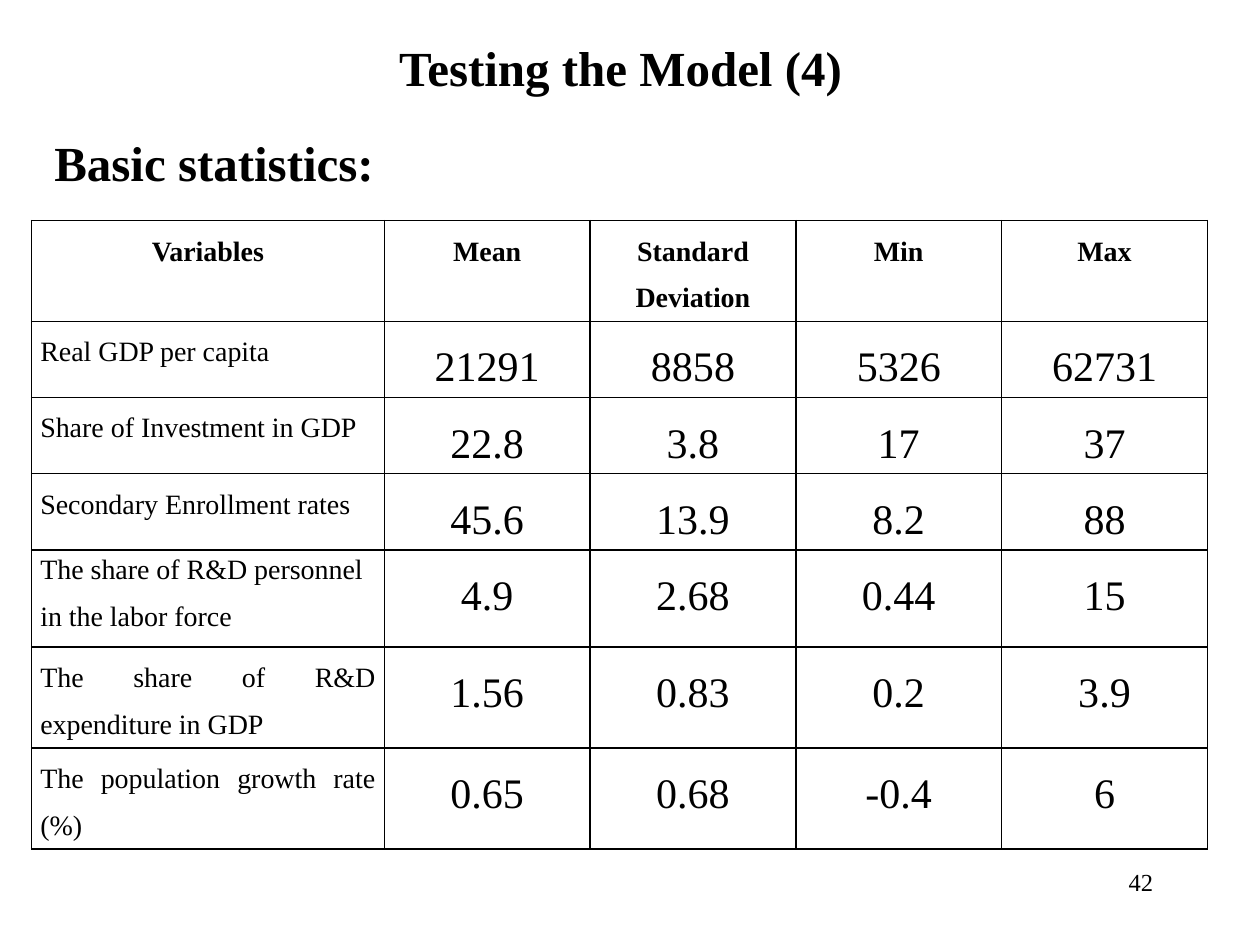
import pptx
import pptx.util
import pptx.dml.color
import pptx.enum.text
import pptx.oxml.ns
import lxml.etree

ALIGN = pptx.enum.text.PP_ALIGN
BLACK = pptx.dml.color.RGBColor(0, 0, 0)
FONT = "Times New Roman"
COLS, ROWS = 120, 90  # slide grid

HEAD = ["Variables", "Mean", "Standard Deviation", "Min", "Max"]
STATS = [
    (["Real GDP per capita"], "21291", "8858", "5326", "62731"),
    (["Share of Investment in GDP"], "22.8", "3.8", "17", "37"),
    (["Secondary Enrollment rates"], "45.6", "13.9", "8.2", "88"),
    (["The share of R&D personnel ", "in the labor force"],
     "4.9", "2.68", "0.44", "15"),
    (["The share of R&D expenditure in GDP"], "1.56", "0.83", "0.2", "3.9"),
    (["The population growth rate (%)"], "0.65", "0.68", "-0.4", "6"),
]
WIDTHS = [33.6] + [19.6] * 4
HEIGHTS = [9.6, 7.25, 7.25, 7.3, 9.25, 9.6, 9.6]

deck = pptx.Presentation()
deck.slide_width = pptx.util.Inches(10)
deck.slide_height = pptx.util.Inches(7.5)


def across(cols):
    return int(deck.slide_width * cols / COLS)


def down(rows):
    return int(deck.slide_height * rows / ROWS)


def scale(box):
    left, top, width, height = box
    return across(left), down(top), across(width), down(height)


def write(para, text, size, bold=False, align=ALIGN.LEFT, space=None):
    para.alignment = align
    if space:
        para.line_spacing = space
    run = para.add_run()
    run.text = text
    font = run.font
    font.name, font.size, font.bold = FONT, pptx.util.Pt(size), bold
    font.color.rgb = BLACK


def add_title(slide, box):
    title = slide.shapes.title
    title.left, title.top, title.width, title.height = scale(box)
    frame = title.text_frame
    frame.word_wrap = True
    frame.auto_size = pptx.enum.text.MSO_AUTO_SIZE.NONE
    frame.vertical_anchor = pptx.enum.text.MSO_ANCHOR.TOP
    write(frame.paragraphs[0], "Testing the Model (4)", 28, True, ALIGN.CENTER)


def add_text(slide, box, text, size, **style):
    frame = slide.shapes.add_textbox(*scale(box)).text_frame
    frame.word_wrap = True
    write(frame.paragraphs[0], text, size, **style)
    return frame.paragraphs[0]


def add_lead(slide, box):
    """Place the line above the table, with a hanging indent."""
    para = add_text(slide, box, "Basic statistics:", 28, bold=True)
    props = para._p.get_or_add_pPr()
    indent = pptx.util.Inches(0.31)
    props.set("marL", str(indent))
    props.set("indent", str(-indent))


def style_cell(cell):
    """Give a cell black borders, no fill and tight margins."""
    cell.margin_left = cell.margin_right = pptx.util.Inches(0.07)
    cell.margin_top = cell.margin_bottom = 0
    props = cell._tc.get_or_add_tcPr()
    qn = pptx.oxml.ns.qn
    for side in ("lnL", "lnR", "lnT", "lnB"):
        line = lxml.etree.SubElement(
            props, qn("a:" + side), w=str(pptx.util.Pt(1)))
        fill = lxml.etree.SubElement(line, qn("a:solidFill"))
        lxml.etree.SubElement(fill, qn("a:srgbClr"), val=str(BLACK))
    cell.fill.background()


def add_stats(slide, box):
    shape = slide.shapes.add_table(len(HEIGHTS), len(WIDTHS), *scale(box))
    table = shape.table
    for col, width in zip(table.columns, WIDTHS):
        col.width = across(width)
    for row, height in zip(table.rows, HEIGHTS):
        row.height = down(height)
    for cell in table.iter_cells():
        style_cell(cell)
    for col, text in enumerate(HEAD):
        para = table.cell(0, col).text_frame.paragraphs[0]
        write(para, text, 16, True, ALIGN.CENTER, 1.5)
    for row, (label, *values) in enumerate(STATS, 1):
        frame = table.cell(row, 0).text_frame
        for i, text in enumerate(label):
            para = frame.add_paragraph() if i else frame.paragraphs[0]
            space = 1.5 if i == len(label) - 1 else 1.15
            write(para, text, 16, align=ALIGN.JUSTIFY, space=space)
        for col, text in enumerate(values, 1):
            para = table.cell(row, col).text_frame.paragraphs[0]
            write(para, text, 24, align=ALIGN.CENTER, space=1.5)


def main():
    slide = deck.slides.add_slide(deck.slide_layouts[5])
    add_text(slide, (86, 82, 25, 6), "42", 14, align=ALIGN.RIGHT)
    add_title(slide, (15, 3, 88.2, 6.84))
    add_lead(slide, (4, 12, 113, 6.84))
    add_stats(slide, (3, 21, sum(WIDTHS), sum(HEIGHTS)))
    deck.save("out.pptx")


if __name__ == "__main__":
    main()
